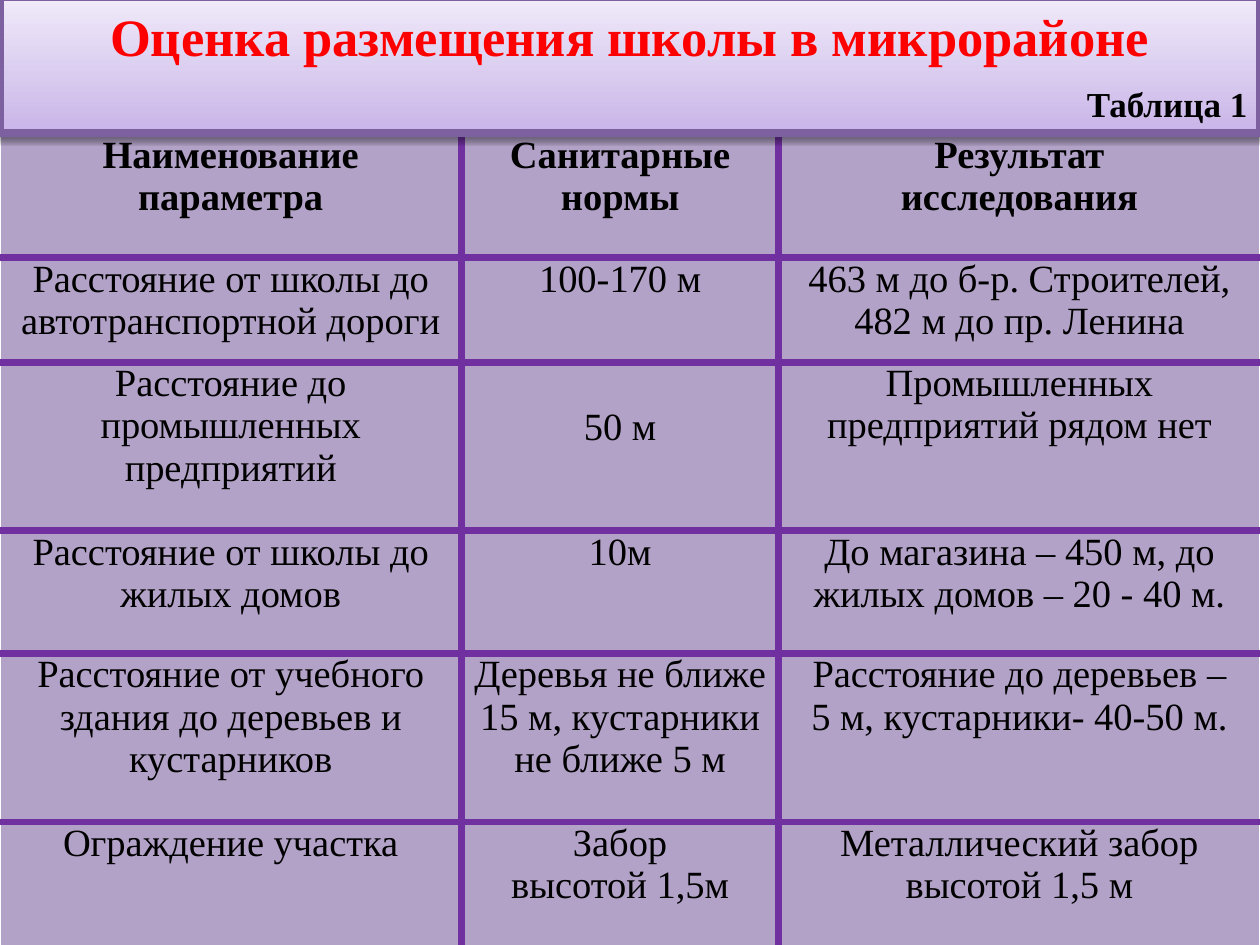
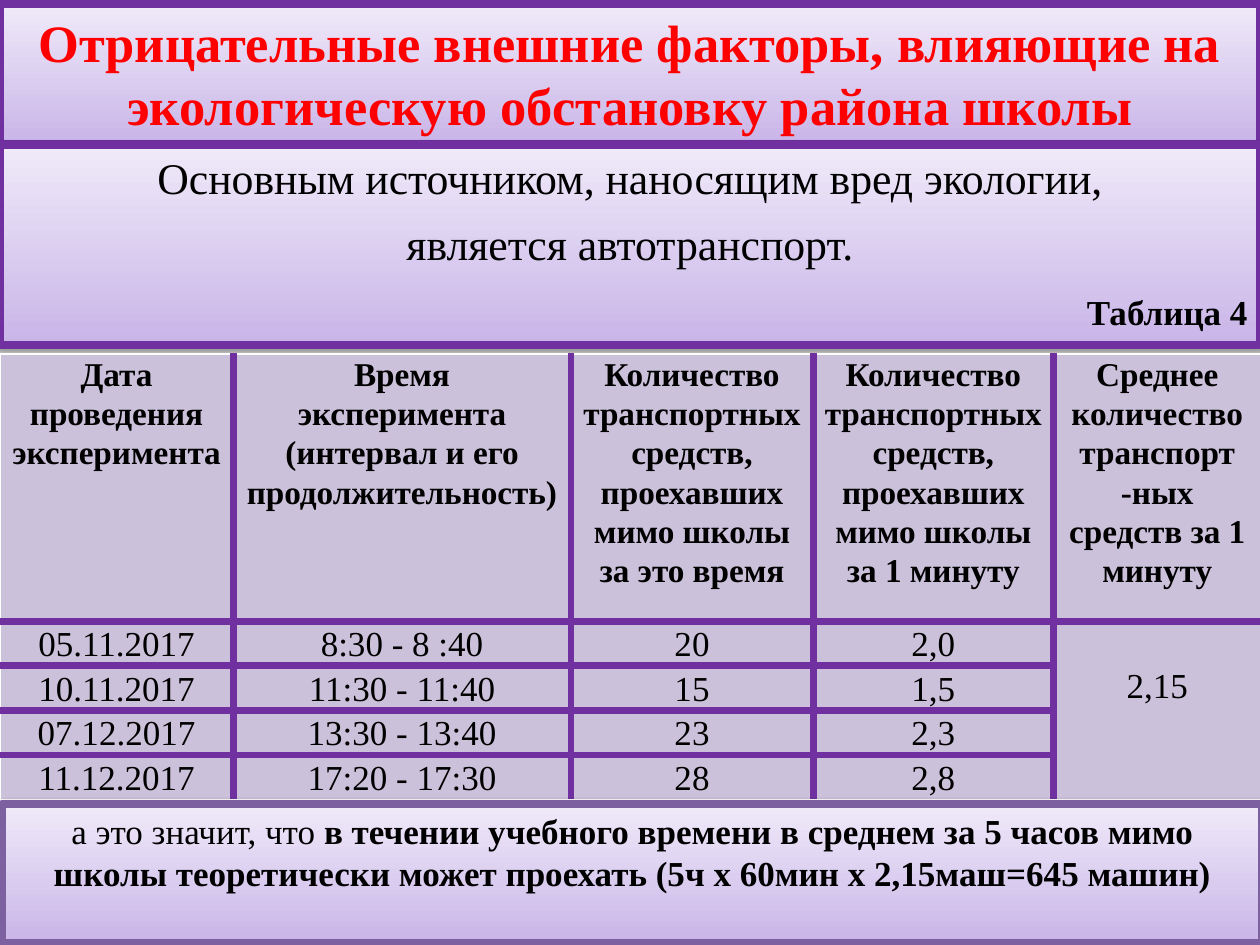
from lxml import etree
from pptx import Presentation
from pptx import util as u
from pptx.dml.color import RGBColor
from pptx.enum import shapes, text
from pptx.oxml import ns

# ---- Shared look ----
COLORS = {
    "title": "FF0000", "text": "000000", "edge": "FFFFFF", "grid": "7030A0",
    "frame": "7D60A0", "light": "F0EAF9", "dark": "C9B5E8",
    "cell_deep": "B3A2C7", "cell_pale": "CCC1DA",
}
FONT = "Times New Roman"
WIDTH, HEIGHT = 25.4, 19.05
CELL_FORMAT = {"margin_left": u.Cm(0.18), "margin_right": u.Cm(0.18),
               "margin_top": 0, "margin_bottom": 0}
PANEL_FORMAT = {"word_wrap": True, "auto_size": text.MSO_AUTO_SIZE.NONE,
                "vertical_anchor": text.MSO_ANCHOR.TOP}
CENTER, RIGHT = text.PP_ALIGN.CENTER, text.PP_ALIGN.RIGHT
TOP, MIDDLE = text.MSO_ANCHOR.TOP, text.MSO_ANCHOR.MIDDLE

# Run formats: size, bold, colour
TITLE = (30, True, "title")
LABEL = (20, True, "text")
PLAIN = (20, False, "text")
LEAD = (25, False, "text")

# ---- Content: a paragraph is (runs, paragraph format) ----
SPACED = {"alignment": CENTER, "space_before": u.Pt(4), "space_after": u.Pt(5)}
SOURCE = {"alignment": CENTER, "space_after": u.Pt(7.5)}
PLACEMENT_TITLE = [
    ([("Оценка размещения школы в микрорайоне", TITLE)], SPACED),
    ([("Таблица 1", LABEL)], {**SPACED, "alignment": RIGHT}),
]
FACTORS_TITLE = [
    ([("Отрицательные внешние факторы, влияющие на экологическую "
       "обстановку района школы", TITLE)], {"alignment": CENTER}),
]
MAIN_SOURCE = [
    ([("Основным источником, наносящим вред экологии,", LEAD)], SOURCE),
    ([("является автотранспорт.", LEAD)], SOURCE),
    ([("Таблица 4", LABEL)], {"alignment": RIGHT, "space_before": u.Pt(4.5)}),
]
CONCLUSION = [
    ([("а это значит, что ", PLAIN),
      ("в течении учебного времени в среднем за 5 часов мимо школы теоретически "
       "может проехать (5ч х 60мин х 2,15маш=645 машин)", LABEL)],
     {"alignment": CENTER}),
]
PLACEMENT = {
    "top": 2.7, "fill": "cell_deep", "sizes": (22, 22), "spacing": 1.0,
    "body_anchor": TOP, "merge": None, "lowered": (2, 1),
    "columns": (9.3, 6.4, 9.7), "heights": (2.5, 2.1, 3.4, 2.47, 3.4, 2.49),
    "rows": [
        ("Наименование параметра", "Санитарные нормы", "Результат\nисследования"),
        ("Расстояние от школы до автотранспортной дороги", "100-170 м",
         "463 м до б-р. Строителей,\n482 м до пр. Ленина"),
        ("Расстояние до промышленных предприятий", "50 м",
         "Промышленных предприятий рядом нет"),
        ("Расстояние от школы до жилых домов", "10м",
         "До магазина – 450 м, до жилых домов – 20 - 40 м."),
        ("Расстояние от учебного здания до деревьев и кустарников",
         "Деревья не ближе\n15 м, кустарники не ближе 5 м",
         "Расстояние до деревьев –\n5 м, кустарники- 40-50 м."),
        ("Ограждение участка", "Забор\nвысотой 1,5м",
         "Металлический забор\nвысотой 1,5 м"),
    ],
}
TRAFFIC = {
    "top": 7.14, "fill": "cell_pale", "sizes": (19, 20), "spacing": 1.07,
    "body_anchor": MIDDLE, "merge": ((1, 4), (4, 4)), "lowered": (1, 4),
    "columns": (4.7, 6.81, 4.88, 4.85, 4.18), "heights": (5.38,) + (0.9,) * 4,
    "rows": [
        ("Дата\nпроведения эксперимента",
         "Время\nэксперимента\n(интервал и его продолжительность)",
         "Количество транспортных средств, проехавших мимо школы за это время",
         "Количество транспортных средств, проехавших мимо школы за 1 минуту",
         "Среднее количество транспорт -ных средств за 1 минуту"),
        ("05.11.2017", "8:30 - 8 :40", "20", "2,0", "2,15"),
        ("10.11.2017", "11:30 - 11:40", "15", "1,5", ""),
        ("07.12.2017", "13:30 - 13:40", "23", "2,3", ""),
        ("11.12.2017", "17:20 - 17:30", "28", "2,8", ""),
    ],
}


# ---- Helpers ----
def rgb(name):
    return RGBColor.from_string(COLORS[name])


def apply(target, formats):
    for name, value in formats.items():
        setattr(target, name, value)


def add_xml(parent, tag, **attributes):
    return etree.SubElement(parent, ns.qn(tag), attributes)


def write(frame, paragraphs):
    for index, (runs, formats) in enumerate(paragraphs):
        para = frame.paragraphs[0] if index == 0 else frame.add_paragraph()
        apply(para, formats)
        for words, (size, bold, color) in runs:
            span = para.add_run()
            span.text = words
            apply(span.font, {"name": FONT, "size": u.Pt(size), "bold": bold})
            span.font.color.rgb = rgb(color)


def style_panel(box, place, line, paragraphs):
    names = ("left", "top", "width", "height")
    apply(box, dict(zip(names, map(u.Cm, place))))
    box.fill.gradient()
    box.fill.gradient_angle = 90
    for stop, color in zip(box.fill.gradient_stops, ("dark", "light")):
        stop.color.rgb = rgb(color)
    box.line.color.rgb = rgb(line)
    box.line.width = u.Pt(4.5)
    # Soft shadow straight below the panel
    box.shadow.inherit = False
    effects = box._element.spPr.find(ns.qn("a:effectLst"))
    shadow = add_xml(effects, "a:outerShdw", blurRad=str(u.Pt(3.1)),
                     dist=str(u.Pt(1.6)), dir="5400000", rotWithShape="0")
    tint = add_xml(shadow, "a:srgbClr", val=COLORS["text"])
    add_xml(tint, "a:alpha", val="38000")
    apply(box.text_frame, PANEL_FORMAT)
    write(box.text_frame, paragraphs)


def add_panel(page, place, line, paragraphs):
    box = page.shapes.add_shape(shapes.MSO_SHAPE.RECTANGLE, 0, 0, 0, 0)
    style_panel(box, place, line, paragraphs)


def add_borders(cell, outer):
    """Thin white on the table's outer edges, thick purple inside."""
    for side in "LRTB":
        color, width = ("edge", 1) if outer[side] else ("grid", 4.5)
        line = add_xml(cell._tc.get_or_add_tcPr(), "a:ln" + side, w=str(u.Pt(width)))
        add_xml(add_xml(line, "a:solidFill"), "a:srgbClr", val=COLORS[color])


def add_grid(page, data):
    rows, columns, heights = data["rows"], data["columns"], data["heights"]
    table = page.shapes.add_table(
        len(rows), len(columns), 0, u.Cm(data["top"]),
        u.Cm(WIDTH), u.Cm(sum(heights))).table
    apply(table, {"first_row": False, "horz_banding": False})
    for column, width in zip(table.columns, columns):
        column.width = u.Cm(width)
    for row, height in zip(table.rows, heights):
        row.height = u.Cm(height)
    if data["merge"]:
        first, last = data["merge"]
        table.cell(*first).merge(table.cell(*last))

    for r, row in enumerate(rows):
        for c, words in enumerate(row):
            cell = table.cell(r, c)
            if cell.is_spanned:
                continue
            span_rows = cell.span_height if cell.is_merge_origin else 1
            add_borders(cell, {"L": c == 0, "R": c == len(columns) - 1,
                               "T": r == 0, "B": r + span_rows == len(rows)})
            cell.fill.solid()
            cell.fill.fore_color.rgb = rgb(data["fill"])
            apply(cell, CELL_FORMAT)
            cell.vertical_anchor = data["body_anchor"] if r else TOP
            if (r, c) == data["lowered"]:
                apply(cell, {"vertical_anchor": TOP, "margin_top": u.Cm(0.88)})
            style = (data["sizes"][min(r, 1)], r == 0, "text")
            formats = {"alignment": CENTER, "line_spacing": data["spacing"]}
            write(cell.text_frame,
                  [([(line, style)], formats) for line in words.split("\n")])


def main():
    deck = Presentation()
    apply(deck, {"slide_width": u.Cm(WIDTH), "slide_height": u.Cm(HEIGHT)})
    title_only = deck.slide_layouts[5]

    # School placement
    page = deck.slides.add_slide(title_only)
    add_grid(page, PLACEMENT)
    title = page.shapes.title
    style_panel(title, (0, -0.05, WIDTH, 2.74), "frame", PLACEMENT_TITLE)
    page.shapes._spTree.append(title._element)  # heading lies over the table

    # Negative outside factors
    page = deck.slides.add_slide(title_only)
    style_panel(page.shapes.title, (0, 0.08, WIDTH, 2.82), "grid", FACTORS_TITLE)
    add_panel(page, (0, 2.92, WIDTH, 4.04), "grid", MAIN_SOURCE)
    add_grid(page, TRAFFIC)
    add_panel(page, (0.05, 16.2, WIDTH, 2.82), "frame", CONCLUSION)

    deck.save("out.pptx")


if __name__ == "__main__":
    main()
